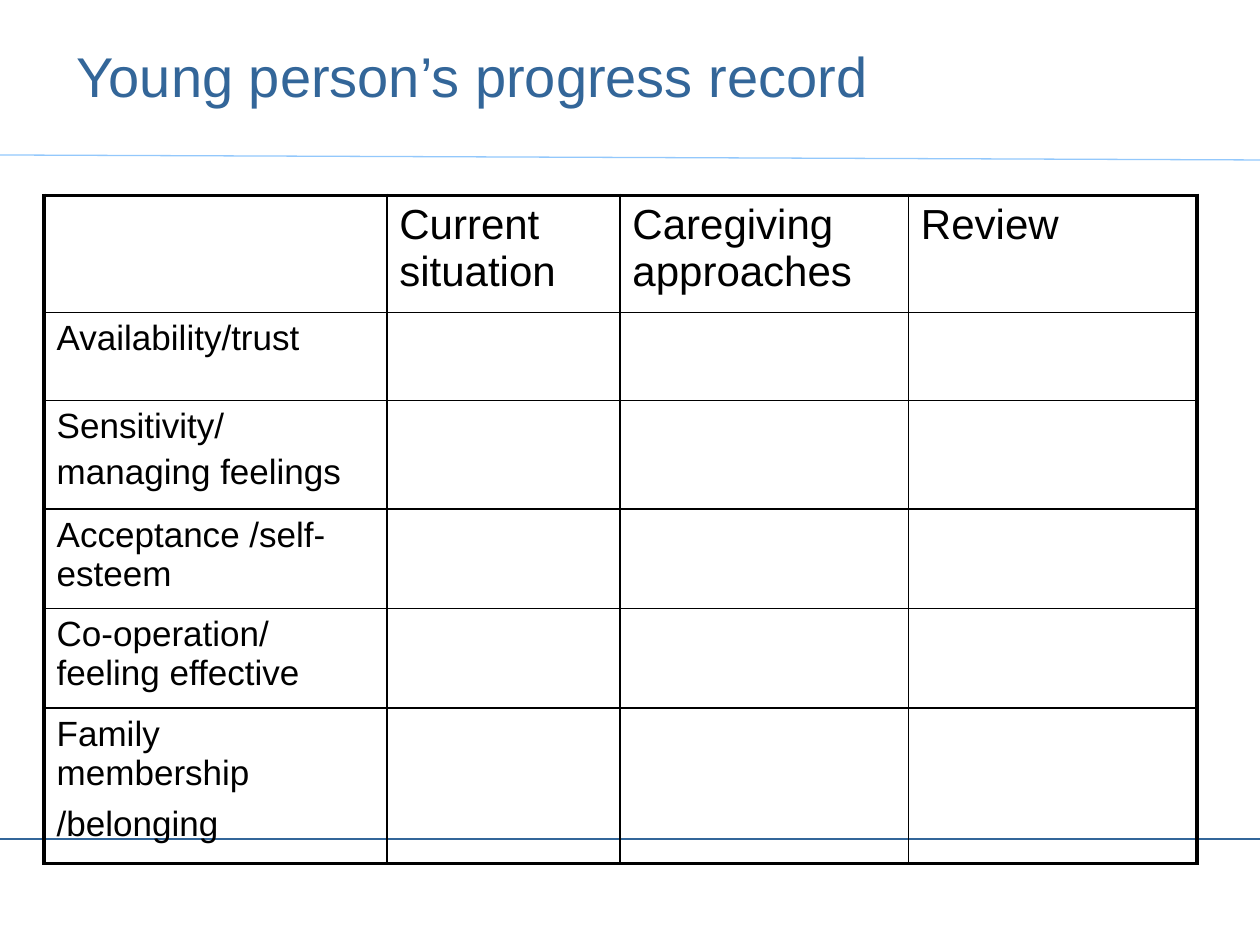
from dataclasses import dataclass

from lxml import etree
from pptx import Presentation
from pptx.dml.color import RGBColor
from pptx.enum.shapes import MSO_CONNECTOR
from pptx.enum.text import MSO_ANCHOR
from pptx.oxml.ns import qn
from pptx.util import Inches, Pt

STRAIGHT = MSO_CONNECTOR.STRAIGHT
TOP = MSO_ANCHOR.TOP
FONT = "Arial"
BLACK = "000000"
BLUE = "336699"
PALE_BLUE = "93C8FC"
OUTER_BORDER = 2.25
INNER_BORDER = 1
HEADER_SIZE = 24
LABEL_SIZE = 20
TRAILING_SPACE_SIZE = 28
COLUMN_WIDTHS = (2.72, 1.85, 2.29, 2.29)
HEADER_HEIGHT = 0.93
HEADERS = ("", "Current situation", "Caregiving approaches", "Review")


@dataclass
class Rule:
    start: tuple[float, float]
    end: tuple[float, float]
    color: str


@dataclass
class RecordRow:
    paragraphs: tuple[str, ...]
    height: float


RULES = (
    Rule((0, 6.66), (10, 6.66), BLUE),
    Rule((0, 1.23), (10.04, 1.27), PALE_BLUE),
)
ROWS = (
    RecordRow(("Availability/trust",), 0.7),
    RecordRow(("Sensitivity/", "managing feelings"), 0.86),
    RecordRow(("Acceptance /self-esteem",), 0.79),
    RecordRow(("Co-operation/ feeling effective",), 0.79),
    RecordRow(("Family membership /belonging",), 0.81),
)


def rgb(color: str) -> RGBColor:
    return RGBColor.from_string(color)


def style_paragraph(paragraph, size: float, color: str) -> None:
    paragraph.font.name = FONT
    paragraph.font.size = Pt(size)
    paragraph.font.color.rgb = rgb(color)


def draw_rule(slide, rule: Rule) -> None:
    points = [Inches(value) for value in rule.start + rule.end]
    connector = slide.shapes.add_connector(STRAIGHT, *points)
    connector.line.color.rgb = rgb(rule.color)
    connector.line.width = Pt(0.75)
    etree.SubElement(connector._element.spPr, qn("a:effectLst"))


def draw_title(slide, text: str) -> None:
    box = slide.shapes.add_textbox(Inches(0.51), Inches(0.28), Inches(9), Inches(1.02))
    frame = box.text_frame
    frame.word_wrap = True
    frame.vertical_anchor = TOP
    frame.text = text
    style_paragraph(frame.paragraphs[0], 32, BLUE)


def set_border(cell, side: str, width: float) -> None:
    line = etree.SubElement(cell._tc.get_or_add_tcPr(), qn(f"a:ln{side}"), w=str(Pt(width)))
    fill = etree.SubElement(line, qn("a:solidFill"))
    etree.SubElement(fill, qn("a:srgbClr"), val=BLACK)


def fill_cell(cell, paragraphs: tuple[str, ...], size: float) -> None:
    cell.text = "\n".join(paragraphs)
    for index, paragraph in enumerate(cell.text_frame.paragraphs):
        if index:
            paragraph.space_before = Pt(size * 0.2)
        style_paragraph(paragraph, size, BLACK)


def draw_table(slide) -> None:
    heights = [HEADER_HEIGHT] + [row.height for row in ROWS]
    last_row, last_column = len(heights) - 1, len(COLUMN_WIDTHS) - 1
    table = slide.shapes.add_table(
        len(heights), len(COLUMN_WIDTHS), Inches(0.35), Inches(1.55),
        Inches(sum(COLUMN_WIDTHS)), Inches(sum(heights)),
    ).table
    table.first_row = False
    table.horz_banding = False
    for column, width in zip(table.columns, COLUMN_WIDTHS):
        column.width = Inches(width)
    for row_index, height in enumerate(heights):
        table.rows[row_index].height = Inches(height)
        for column_index in range(len(COLUMN_WIDTHS)):
            cell = table.cell(row_index, column_index)
            outer_sides = {
                "L": column_index == 0,
                "R": column_index == last_column,
                "T": row_index == 0,
                "B": row_index == last_row,
            }
            for side, is_outer in outer_sides.items():
                set_border(cell, side, OUTER_BORDER if is_outer else INNER_BORDER)
            cell.fill.background()
    for column_index, header in enumerate(HEADERS):
        fill_cell(table.cell(0, column_index), (header,), HEADER_SIZE)
    for row_index, row in enumerate(ROWS, start=1):
        fill_cell(table.cell(row_index, 0), row.paragraphs, LABEL_SIZE)
    trailing_run = table.cell(last_row, 0).text_frame.paragraphs[0].add_run()
    trailing_run.text = " "
    trailing_run.font.size = Pt(TRAILING_SPACE_SIZE)


def main() -> None:
    presentation = Presentation()
    presentation.slide_width = Inches(10)
    presentation.slide_height = Inches(7.5)
    slide = presentation.slides.add_slide(presentation.slide_layouts[6])
    for rule in RULES:
        draw_rule(slide, rule)
    draw_title(slide, "Young person’s progress record")
    draw_table(slide)
    presentation.save("out.pptx")


if __name__ == "__main__":
    main()
